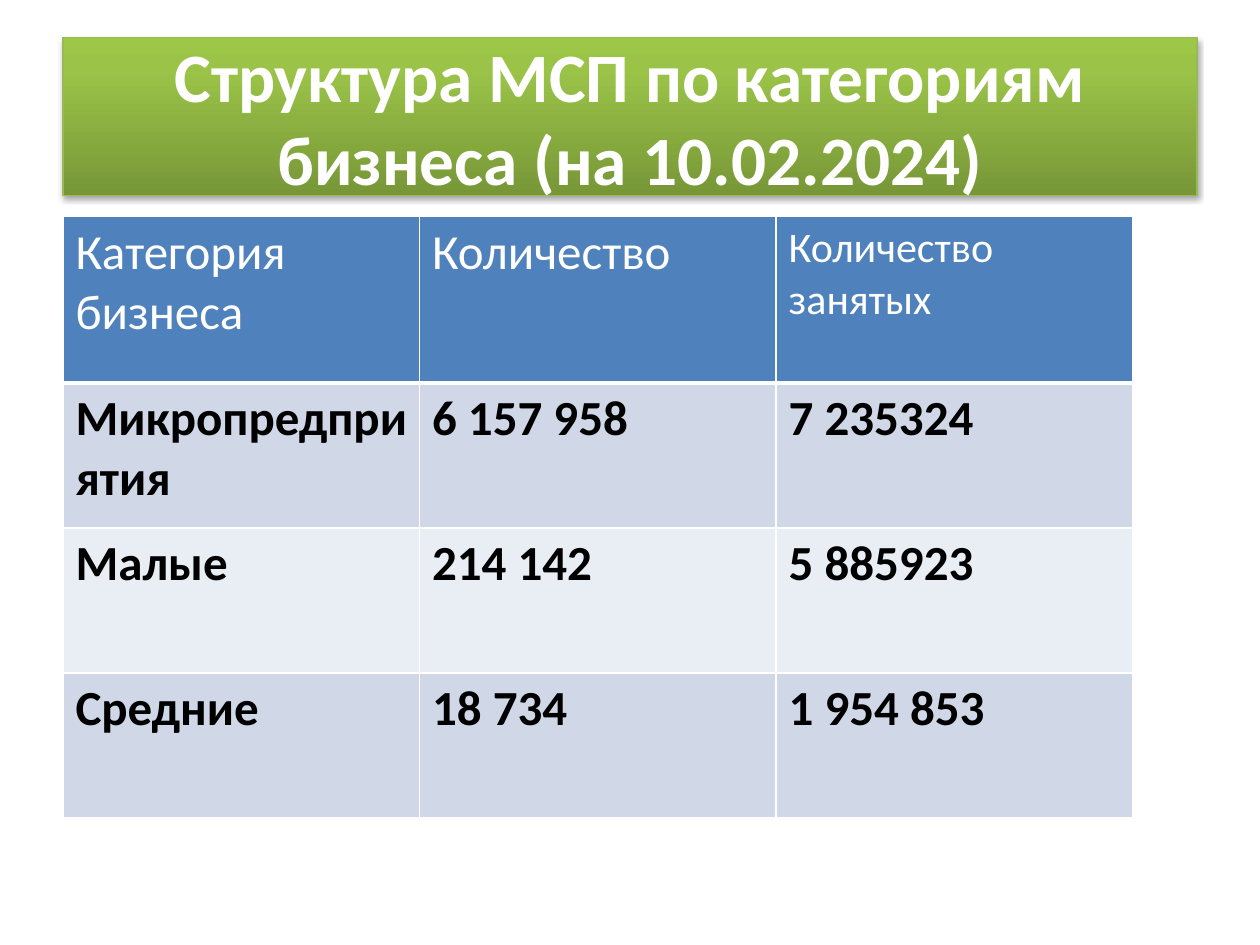
from copy import deepcopy

from lxml import etree
from pptx import Presentation
from pptx import util as u
from pptx.dml.color import RGBColor
from pptx.enum import text
from pptx.oxml import ns

WHITE = RGBColor(0xFF, 0xFF, 0xFF)
BLACK = RGBColor(0, 0, 0)
BLUE = RGBColor(0x4F, 0x81, 0xBD)
BAND_DARK = RGBColor(0xD0, 0xD8, 0xE8)
BAND_LIGHT = RGBColor(0xE9, 0xED, 0xF4)
GREEN_LINE = RGBColor(0x98, 0xB9, 0x55)
GREEN_STOPS = [
    (0, RGBColor(0x77, 0x97, 0x37)),
    (0.8, RGBColor(0x9B, 0xC3, 0x48)),
    (1, RGBColor(0x9D, 0xC7, 0x46)),
]

TITLE = "Структура МСП по категориям бизнеса (на 10.02.2024)"
ROWS = [
    ["Категория бизнеса", "Количество", "Количество занятых"],
    ["Микропредприятия", "6 157 958", "7 235324"],
    ["Малые", "214 142", "5 885923"],
    ["Средние", "18 734", "1 954 853"],
]
HEADER_SIZES = [28, 28, 24]
ROW_HEIGHTS = [1.32, 1.15, 1.15, 1.15]


def add_xml(parent, tag, **attributes):
    return etree.SubElement(parent, ns.qn(tag), attributes)


class SlideBuilder:
    font_name = "Calibri"

    def __init__(self, slide):
        self.slide = slide

    def style(self, paragraph, size, color, bold):
        font = paragraph.font
        font.name, font.size, font.bold = self.font_name, u.Pt(size), bold
        font.color.rgb = color

    def gradient(self, shape, stops):
        shape.fill.gradient()
        shape.fill.gradient_angle = 90
        stop_list = shape._element.spPr.find(".//" + ns.qn("a:gsLst"))
        stop_list.append(deepcopy(stop_list[-1]))
        for stop, (position, color) in zip(shape.fill.gradient_stops, stops):
            stop.position = position
            stop.color.rgb = color

    def soft_shadow(self, shape):
        shape.shadow.inherit = False
        effects = shape._element.spPr.find(ns.qn("a:effectLst"))
        shadow = add_xml(effects, "a:outerShdw", blurRad="40000", dist="23000",
                         dir="5400000", rotWithShape="0")
        color = add_xml(shadow, "a:srgbClr", val=str(BLACK))
        add_xml(color, "a:alpha", val="35000")

    def title(self, wording, left, top, width, height):
        shape = self.slide.shapes.title
        shape.left, shape.top = u.Inches(left), u.Inches(top)
        shape.width, shape.height = u.Inches(width), u.Inches(height)
        self.gradient(shape, GREEN_STOPS)
        shape.line.color.rgb = GREEN_LINE
        shape.line.width = u.Pt(0.75)
        self.soft_shadow(shape)
        frame = shape.text_frame
        frame.text = wording
        frame.word_wrap = True
        frame.auto_size = text.MSO_AUTO_SIZE.NONE
        frame.vertical_anchor = text.MSO_ANCHOR.MIDDLE
        frame.paragraphs[0].alignment = text.PP_ALIGN.CENTER
        self.style(frame.paragraphs[0], 39.6, WHITE, True)

    def borders(self, cell, bottom):
        properties = cell._tc.get_or_add_tcPr()
        for side, width in zip("LRTB", (1, 1, 1, bottom)):
            line = add_xml(properties, "a:ln" + side, w=str(u.Pt(width)))
            fill = add_xml(line, "a:solidFill")
            add_xml(fill, "a:srgbClr", val=str(WHITE))

    def cell(self, cell, wording, size, color, bold, fill, bottom):
        cell.text = wording
        self.style(cell.text_frame.paragraphs[0], size, color, bold)
        self.borders(cell, bottom)
        cell.fill.solid()
        cell.fill.fore_color.rgb = fill

    def table(self, rows, left, top, column_width, row_heights):
        columns = len(rows[0])
        table = self.slide.shapes.add_table(
            len(rows), columns, u.Inches(left), u.Inches(top),
            u.Inches(column_width * columns), u.Inches(sum(row_heights))).table
        for column in table.columns:
            column.width = u.Inches(column_width)
        for r, (values, height) in enumerate(zip(rows, row_heights)):
            table.rows[r].height = u.Inches(height)
            band = BAND_DARK if r % 2 else BAND_LIGHT
            for c, value in enumerate(values):
                if r == 0:
                    look = (HEADER_SIZES[c], WHITE, False, BLUE, 3)
                else:
                    look = (28, BLACK, True, band, 1)
                self.cell(table.cell(r, c), value, *look)


def main():
    presentation = Presentation()
    presentation.slide_width = u.Inches(10)
    presentation.slide_height = u.Inches(7.5)
    layout = presentation.slide_layouts.get_by_name("Title Only")
    builder = SlideBuilder(presentation.slides.add_slide(layout))

    # Title banner
    builder.title(TITLE, 0.5, 0.3, 9, 1.25)

    # Businesses and employees by category
    builder.table(ROWS, 0.5, 1.72, 2.83, ROW_HEIGHTS)

    presentation.save("out.pptx")


if __name__ == "__main__":
    main()
